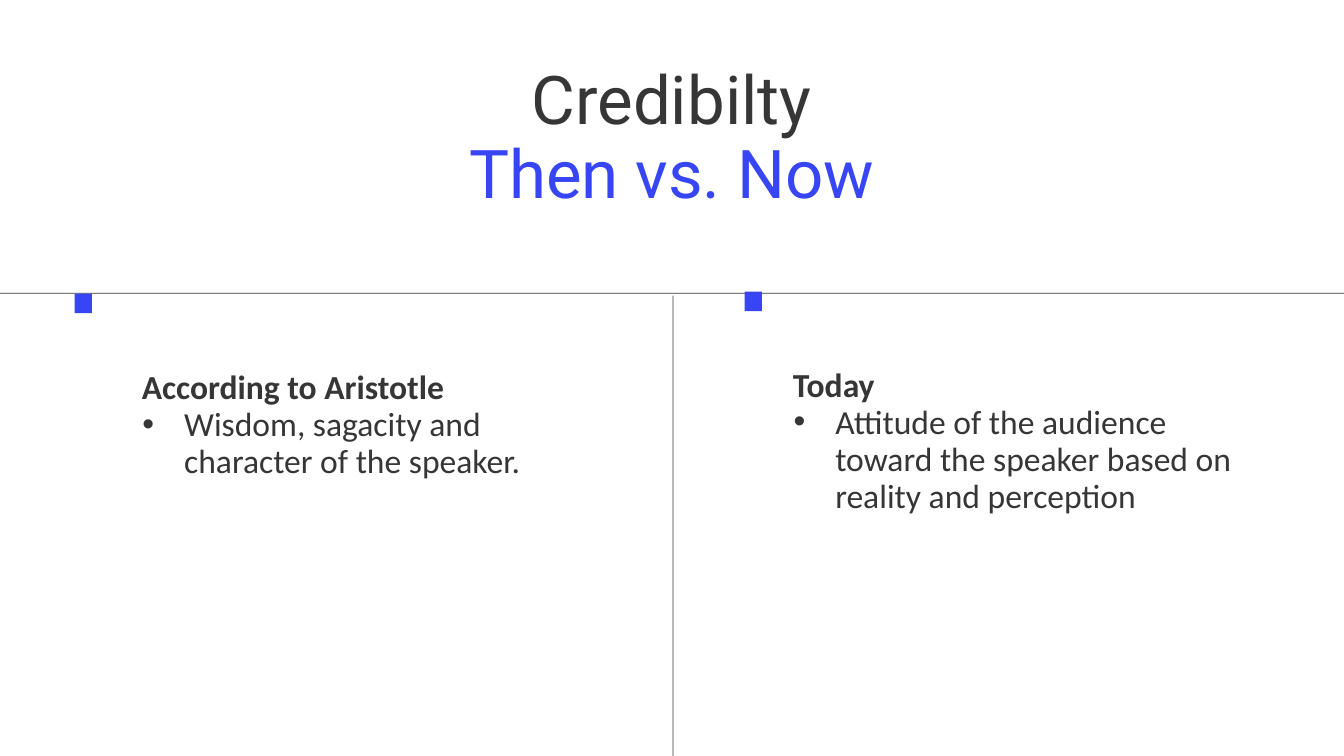
"""Build the slide comparing credibility then and now."""
import pptx
import pptx.dml.color
import pptx.enum.shapes
import pptx.enum.text
import pptx.oxml.ns
import pptx.util
from lxml import etree

Inches = pptx.util.Inches
Pt = pptx.util.Pt
INK = pptx.dml.color.RGBColor(0x37, 0x36, 0x36)
BLUE = pptx.dml.color.RGBColor(0x37, 0x45, 0xF4)


def add_span(para, text, color, **font_format):
    span = para.add_run()
    span.text = text
    span.font.color.rgb = color
    for name, value in font_format.items():
        setattr(span.font, name, value)


def prepare_frame(frame):
    frame_format = {
        "margin_left": 0, "margin_top": 0, "margin_right": 0, "margin_bottom": 0,
        "word_wrap": True,
        "vertical_anchor": pptx.enum.text.MSO_ANCHOR.TOP,
        "auto_size": pptx.enum.text.MSO_AUTO_SIZE.SHAPE_TO_FIT_TEXT,
    }
    for name, value in frame_format.items():
        setattr(frame, name, value)


deck = pptx.Presentation()
deck.slide_width = Inches(20)
deck.slide_height = Inches(11.25)
page = deck.slides.add_slide(deck.slide_layouts[5])

title = page.shapes.title
title_place = {"left": 3.83, "top": 0.96, "width": 12.33, "height": 2.22}
for name, value in title_place.items():
    setattr(title, name, Inches(value))
prepare_frame(title.text_frame)
title_para = title.text_frame.paragraphs[0]
title_para.alignment = pptx.enum.text.PP_ALIGN.CENTER
title_para.line_spacing = Pt(79.2)
title_font = {"name": "Roboto", "size": Pt(72)}
add_span(title_para, "Credibilty", INK, **title_font)
title_para.add_line_break()
add_span(title_para, "Then vs. Now", BLUE, **title_font)

bars = [
    (0, 4.36, 20, 0.01, INK),
    (10.01, 4.4, 0.01, 6.85, INK),
    (1.11, 4.37, 0.26, 0.29, BLUE),
    (11.08, 4.34, 0.26, 0.29, BLUE),
]
for left, top, width, height, color in bars:
    bar = page.shapes.add_shape(
        pptx.enum.shapes.MSO_SHAPE.RECTANGLE,
        Inches(left), Inches(top), Inches(width), Inches(height))
    bar.shadow.inherit = False
    bar.fill.solid()
    bar.fill.fore_color.rgb = color
    bar.line.fill.background()

columns = [
    (1.69, 5.5, 3.37, "According to Aristotle",
     "Wisdom, sagacity and character of the speaker."),
    (11.38, 5.47, 3.93, "Today",
     "Attitude of the audience toward the speaker based on reality and perception"),
]
for left, top, height, heading, point in columns:
    box = page.shapes.add_textbox(Inches(left), Inches(top), Inches(6.98), Inches(height))
    frame = box.text_frame
    prepare_frame(frame)
    heading_para = frame.paragraphs[0]
    point_para = frame.add_paragraph()
    lines = [
        (heading_para, heading, True, 0.42, 0),
        (point_para, point, False, 1.05, -0.62),
    ]
    for para, text, bold, margin, indent in lines:
        para.level = 1
        para.line_spacing = Pt(39.6)
        add_span(para, text, INK, name="Calibri", size=Pt(36), bold=bold)
        properties = para._p.get_or_add_pPr()
        properties.set("marL", str(Inches(margin)))
        properties.set("indent", str(Inches(indent)))
    point_properties = point_para._p.get_or_add_pPr()
    etree.SubElement(point_properties, pptx.oxml.ns.qn("a:buFont")).set("typeface", "Arial")
    etree.SubElement(point_properties, pptx.oxml.ns.qn("a:buChar")).set("char", "•")

deck.save("out.pptx")
